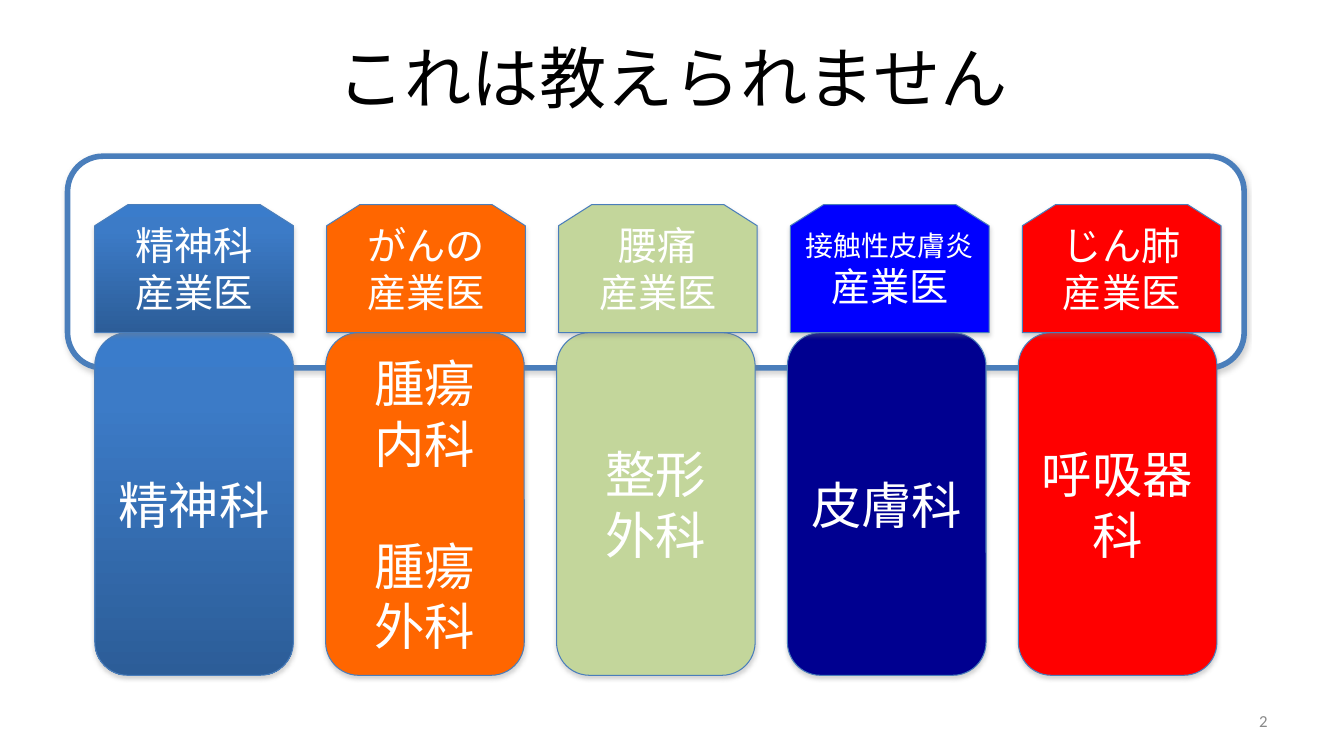
from copy import deepcopy

from lxml import etree
from pptx import Presentation
from pptx import util as u
from pptx.dml.color import RGBColor
from pptx.enum import shapes, text
from pptx.oxml.ns import qn

PX = 9144  # EMU per px, 100 px to the inch
FONT = "Calibri"

BLACK = RGBColor(0x00, 0x00, 0x00)
WHITE = RGBColor(0xFF, 0xFF, 0xFF)
GREY = RGBColor(0x89, 0x89, 0x89)
OUTLINE = RGBColor(0x4A, 0x7E, 0xBB)
ORANGE = RGBColor(0xFF, 0x66, 0x00)
GREEN = RGBColor(0xC3, 0xD6, 0x9B)
BLUE = RGBColor(0x00, 0x00, 0xFF)
NAVY = RGBColor(0x00, 0x00, 0x90)
RED = RGBColor(0xFF, 0x00, 0x00)
STEEL = (  # gradient from top to bottom
    (0, RGBColor(0x3A, 0x7C, 0xCB)),
    (0.2, RGBColor(0x3C, 0x7B, 0xC7)),
    (1, RGBColor(0x2C, 0x5D, 0x98)),
)

# Column geometry
LEFT, WIDTH = 94, 197
ROOF_TOP, ROOF_HEIGHT, ROOF_PITCH = 203, 127, 230
PILLAR_TOP, PILLAR_HEIGHT, PILLAR_PITCH = 330, 340, 229
CUT_X, CUT_Y = 33, 21

# Physician, size of its first line, roof fill, departments, pillar fill
COLUMNS = [
    ("精神科", 28, STEEL, [["精神科"]], STEEL),
    ("がんの", 28, ORANGE, [["腫瘍", "内科"], ["腫瘍", "外科"]], ORANGE),
    ("腰痛", 28, GREEN, [["整形", "外科"]], GREEN),
    ("接触性皮膚炎", 20, BLUE, [["皮膚科"]], NAVY),
    ("じん肺", 28, RED, [["呼吸器科"]], RED),
]


def px(*lengths):
    return [u.Emu(length * PX) for length in lengths]


def set_all(target, values):
    for name, value in values.items():
        setattr(target, name, value)


def write(shape, lines, color, align=text.PP_ALIGN.CENTER):
    """Each line is (wording, size, space before), in points."""
    frame = shape.text_frame
    set_all(frame, {"word_wrap": True, "vertical_anchor": text.MSO_ANCHOR.MIDDLE})
    for index, (wording, size, gap) in enumerate(lines):
        paragraph = frame.paragraphs[0] if index == 0 else frame.add_paragraph()
        set_all(paragraph, {"alignment": align, "space_before": u.Pt(gap)})
        run = paragraph.add_run()
        run.text = wording
        set_all(run.font, {"name": FONT, "size": u.Pt(size)})
        run.font.color.rgb = color


def paint(shape, fill, line_width=0.75):
    if isinstance(fill, RGBColor):
        shape.fill.solid()
        shape.fill.fore_color.rgb = fill
    else:
        shape.fill.gradient()
        shape.fill.gradient_angle = 270
        first = shape._element.spPr.xpath(".//a:gs")[0]
        first.addnext(deepcopy(first))
        for stop, (position, color) in zip(shape.fill.gradient_stops, fill):
            stop.position = position
            stop.color.rgb = color
    shape.line.color.rgb = OUTLINE
    shape.line.width = u.Pt(line_width)
    add_shadow(shape)


def add_shadow(shape):
    shape.shadow.inherit = False
    effects = shape._element.spPr.find(qn("a:effectLst"))
    outer = etree.SubElement(effects, qn("a:outerShdw"), blurRad="40000",
                             dist="23000", dir="5400000", rotWithShape="0")
    tint = etree.SubElement(outer, qn("a:srgbClr"), val="808080")
    etree.SubElement(tint, qn("a:alpha"), val="35000")


def add_rounded(slide, box, fill, line_width=0.75):
    rounded = slide.shapes.add_shape(shapes.MSO_SHAPE.ROUNDED_RECTANGLE, *px(*box))
    paint(rounded, fill, line_width)
    return rounded


def add_roof(slide, left, fill):
    right, bottom = left + WIDTH, ROOF_TOP + ROOF_HEIGHT
    shoulder = ROOF_TOP + CUT_Y
    builder = slide.shapes.build_freeform(left + CUT_X, ROOF_TOP, scale=PX)
    builder.add_line_segments([
        (right - CUT_X, ROOF_TOP), (right, shoulder), (right, bottom),
        (left, bottom), (left, shoulder),
    ], close=True)
    roof = builder.convert_to_shape()
    paint(roof, fill)
    return roof


def department_lines(groups):
    return [(wording, 36, 44 if group and not row else 0)
            for group, names in enumerate(groups)
            for row, wording in enumerate(names)]


def main():
    deck = Presentation()
    deck.slide_width, deck.slide_height = px(1333, 750)
    slide = deck.slides.add_slide(deck.slide_layouts[5])

    # Title
    title = slide.shapes.title
    set_all(title, dict(zip(("left", "top", "width", "height"), px(67, 30, 1200, 93))))
    write(title, [("これは教えられません", 48, 0)], BLACK)

    # Frame behind the columns
    add_rounded(slide, (67, 155, 1167, 210), WHITE, 4)

    # Departments as pillars
    for index, (_, _, _, groups, fill) in enumerate(COLUMNS):
        left = LEFT + index * PILLAR_PITCH
        pillar = add_rounded(slide, (left, PILLAR_TOP, WIDTH, PILLAR_HEIGHT), fill)
        write(pillar, department_lines(groups), WHITE)

    # Occupational physicians as roofs
    for index, (field, size, fill, _, _) in enumerate(COLUMNS):
        roof = add_roof(slide, LEFT + index * ROOF_PITCH, fill)
        write(roof, [(field, size, 0), ("産業医", 28, 0)], WHITE)

    # Page number
    page = slide.shapes.add_textbox(*px(956, 695, 311, 40))
    write(page, [("2", 12, 0)], GREY, text.PP_ALIGN.RIGHT)

    deck.save("out.pptx")


if __name__ == "__main__":
    main()
